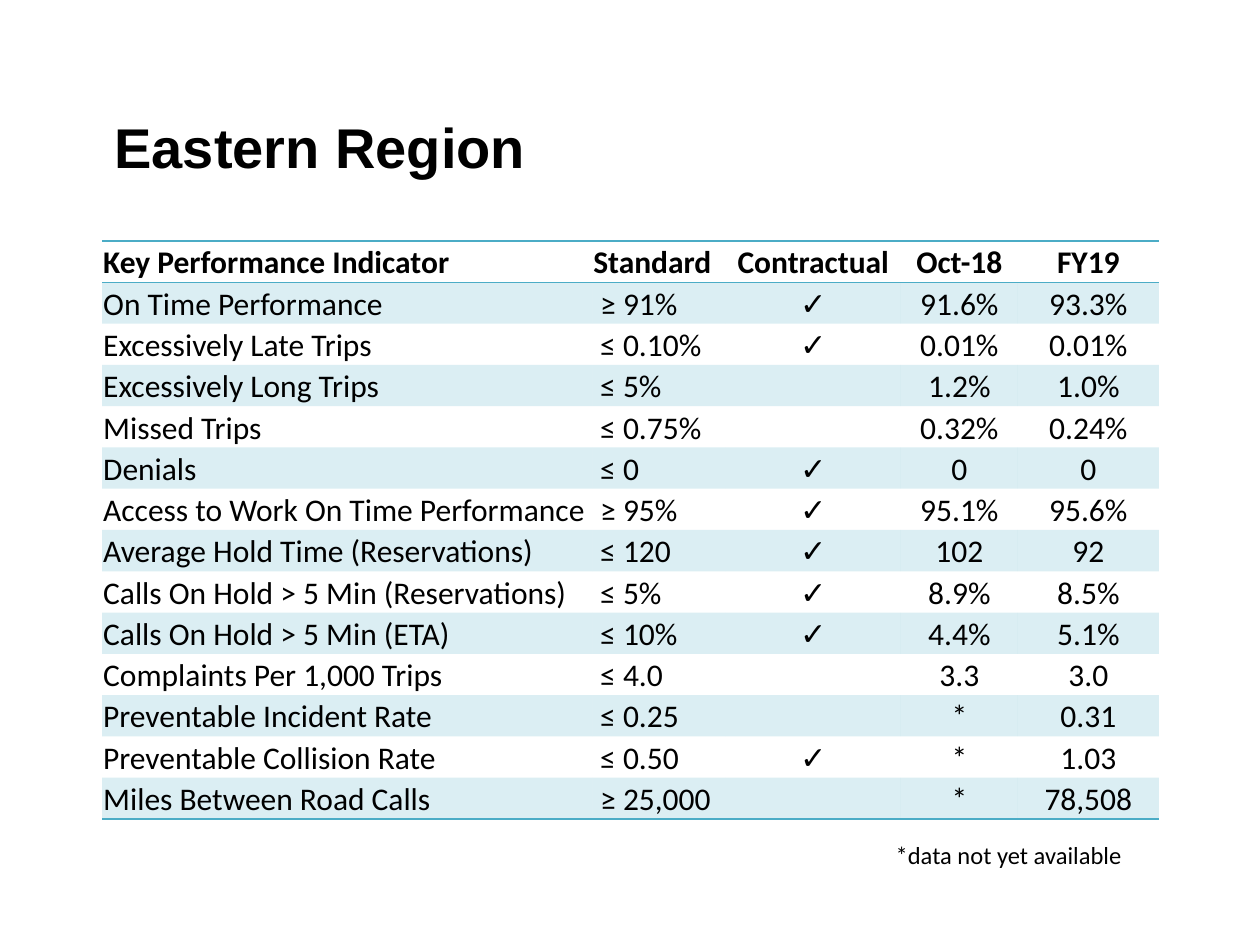
from lxml.etree import SubElement
from pptx import Presentation
from pptx.dml.color import RGBColor
from pptx.enum.text import MSO_ANCHOR, PP_ALIGN
from pptx.oxml.ns import qn
from pptx.util import Cm, Pt

BLACK = RGBColor(0x00, 0x00, 0x00)
TEAL = RGBColor(0x4B, 0xAC, 0xC6)
PLAIN_TABLE_STYLE = "{2D5ABB26-0587-4C30-8999-92F81FD0307C}"
CHECK = "✓"

HEADINGS = ("Key Performance Indicator", "Standard", "Contractual", "Oct-18", "FY19")
INDICATORS = [
    ("On Time Performance", "≥ 91%", CHECK, "91.6%", "93.3%"),
    ("Excessively Late Trips", "≤ 0.10%", CHECK, "0.01%", "0.01%"),
    ("Excessively Long Trips", "≤ 5%", "", "1.2%", "1.0%"),
    ("Missed Trips", "≤ 0.75%", "", "0.32%", "0.24%"),
    ("Denials", "≤ 0", CHECK, "0", "0"),
    ("Access to Work On Time Performance", "≥ 95%", CHECK, "95.1%", "95.6%"),
    ("Average Hold Time (Reservations)", "≤ 120", CHECK, "102", "92"),
    ("Calls On Hold > 5 Min (Reservations)", "≤ 5%", CHECK, "8.9%", "8.5%"),
    ("Calls On Hold > 5 Min (ETA)", "≤ 10%", CHECK, "4.4%", "5.1%"),
    ("Complaints Per 1,000 Trips", "≤ 4.0", "", "3.3", "3.0"),
    ("Preventable Incident Rate", "≤ 0.25", "", "*", "0.31"),
    ("Preventable Collision Rate", "≤ 0.50", CHECK, "*", "1.03"),
    ("Miles Between Road Calls", "≥ 25,000", "", "*", "78,508"),
]
ROWS = [HEADINGS, *INDICATORS]
COLUMN_WIDTHS = (9.88, 2.69, 3.53, 2.36, 2.84)


def write(para, text, font_name, size, bold=False):
    para.font.size = Pt(size)
    if text:
        span = para.add_run()
        span.text = text
        span.font.name = font_name
        span.font.size = Pt(size)
        span.font.bold = bold
        span.font.color.rgb = BLACK


def add_border(cell, side):
    line = SubElement(cell._tc.get_or_add_tcPr(), qn(f"a:{side}"), w=str(Pt(1)))
    fill = SubElement(line, qn("a:solidFill"))
    SubElement(fill, qn("a:srgbClr"), val=str(TEAL))


deck = Presentation()
deck.slide_width, deck.slide_height = Cm(25.4), Cm(19.05)
page = deck.slides.add_slide(deck.slide_layouts[6])

title = page.shapes.add_textbox(Cm(2.06), Cm(2.13), Cm(21.31), Cm(1.63)).text_frame
title.word_wrap = True
title.vertical_anchor = MSO_ANCHOR.MIDDLE
write(title.paragraphs[0], "Eastern Region", "Arial", 32, bold=True)

frame = page.shapes.add_table(
    len(ROWS), len(HEADINGS), Cm(2.06), Cm(4.86), Cm(21.3), Cm(11.66)
)
table = frame.table
table.first_row = False
table.horz_banding = False
table._tbl.tblPr.find(qn("a:tableStyleId")).text = PLAIN_TABLE_STYLE
for column, width in zip(table.columns, COLUMN_WIDTHS):
    column.width = Cm(width)

for row, values in enumerate(ROWS):
    for col, value in enumerate(values):
        cell = table.cell(row, col)
        is_standard = col == 1 and row > 0
        cell.margin_left = Cm(0.16 if is_standard else 0.02)
        cell.margin_right = cell.margin_top = Cm(0.02)
        cell.margin_bottom = 0
        cell.vertical_anchor = MSO_ANCHOR.BOTTOM
        if row == 0:
            add_border(cell, "lnT")
        if row in (0, len(ROWS) - 1):
            add_border(cell, "lnB")
        if row % 2:
            cell.fill.solid()
            cell.fill.fore_color.rgb = TEAL
            color = cell._tc.tcPr.find(qn("a:solidFill")).find(qn("a:srgbClr"))
            SubElement(color, qn("a:alpha"), val="20000")
        else:
            cell.fill.background()
        para = cell.text_frame.paragraphs[0]
        para.alignment = PP_ALIGN.CENTER if col > 1 else PP_ALIGN.LEFT
        write(para, value, "Calibri", 18, bold=row == 0)

footnote = page.shapes.add_textbox(Cm(16.36), Cm(16.81), Cm(6.5), Cm(0.86)).text_frame
footnote.word_wrap = True
footnote.paragraphs[0].alignment = PP_ALIGN.RIGHT
write(footnote.paragraphs[0], "*data not yet available", "Calibri", 14)

deck.save("out.pptx")
